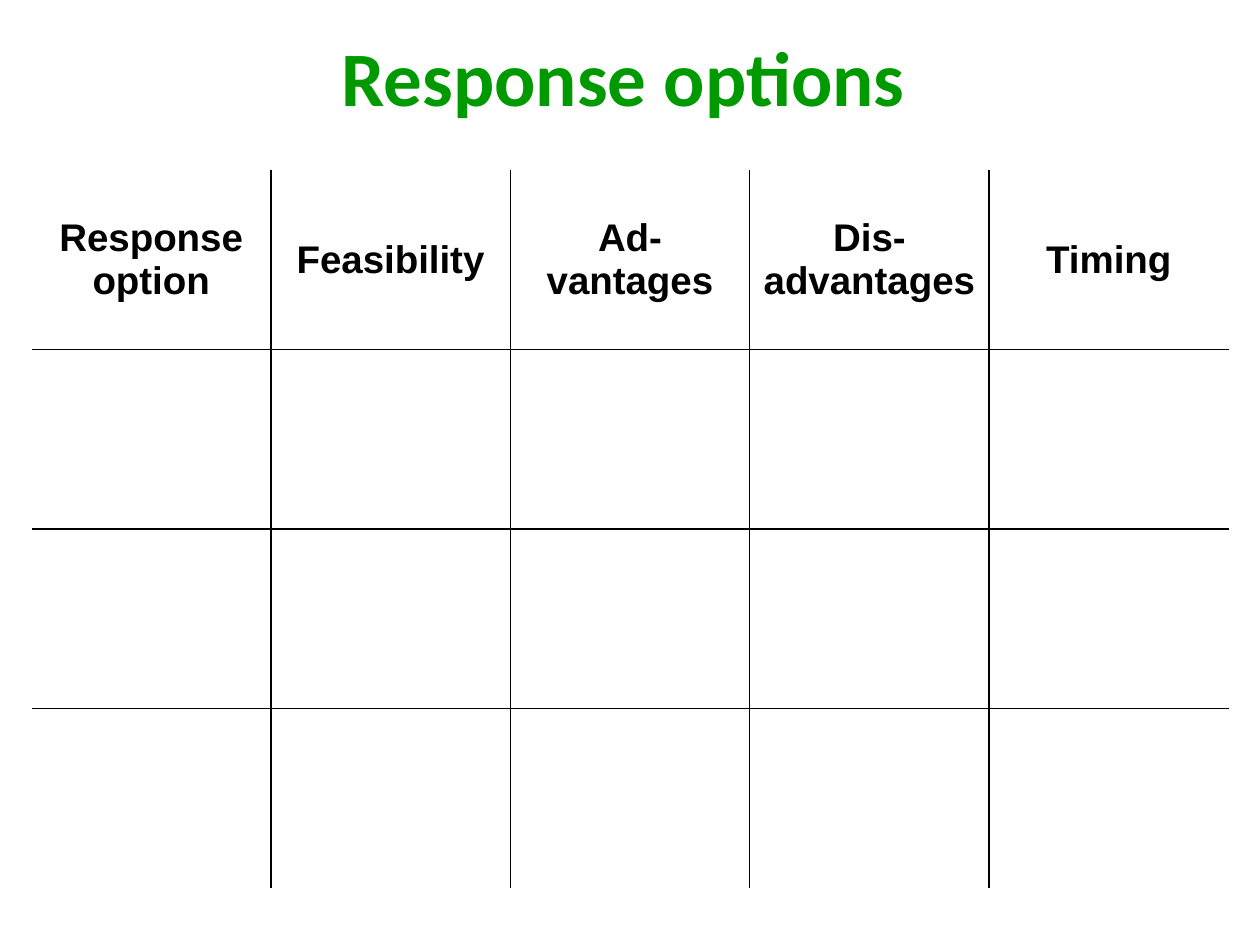
from dataclasses import dataclass

from lxml import etree
from pptx import Presentation
from pptx.dml.color import RGBColor
from pptx.enum.text import MSO_ANCHOR, PP_ALIGN
from pptx.oxml.ns import qn
from pptx.util import Inches, Pt

CENTER = PP_ALIGN.CENTER
MIDDLE = MSO_ANCHOR.MIDDLE
TITLE_ONLY = 5
HEADINGS = ["Response option", "Feasibility", "Ad-vantages", "Dis-advantages", "Timing"]
OPTION_ROWS = 3


@dataclass(frozen=True)
class Theme:
    """Colours, fonts and sizes of the slide."""
    title_color: str = "009900"
    ink: str = "000000"
    paper: str = "FFFFFF"
    title_font: str = "Calibri"
    body_font: str = "Arial"
    title_size: int = 44
    heading_size: int = 22
    rule_width: int = 1


class SlideBuilder:
    """Draws styled elements on one slide, placed in shares of its size."""

    def __init__(self, presentation, theme):
        self.theme = theme
        self.width = presentation.slide_width
        self.height = presentation.slide_height
        self.slide = presentation.slides.add_slide(presentation.slide_layouts[TITLE_ONLY])

    def area(self, left, top, width, height):
        """Turn shares of the slide into lengths."""
        return (int(left * self.width), int(top * self.height),
                int(width * self.width), int(height * self.height))

    def set_text(self, text_frame, text, font_name, size, color):
        """Set one bold, centred paragraph."""
        paragraph = text_frame.paragraphs[0]
        paragraph.text = text
        paragraph.alignment = CENTER
        font = paragraph.font
        font.name, font.size, font.bold = font_name, Pt(size), True
        font.color.rgb = RGBColor.from_string(color)

    def title(self, text, *shares):
        """Place and fill the title placeholder."""
        shape = self.slide.shapes.title
        shape.left, shape.top, shape.width, shape.height = self.area(*shares)
        shape.text_frame.vertical_anchor = MIDDLE
        self.set_text(shape.text_frame, text, self.theme.title_font,
                      self.theme.title_size, self.theme.title_color)

    def border(self, cell, side, visible):
        """Rule one side of a cell, or leave it open."""
        properties = cell._tc.get_or_add_tcPr()
        line = etree.SubElement(properties, qn(f"a:ln{side}"), w=str(Pt(self.theme.rule_width)))
        if visible:
            fill = etree.SubElement(line, qn("a:solidFill"))
            etree.SubElement(fill, qn("a:srgbClr"), val=self.theme.ink)
        else:
            etree.SubElement(line, qn("a:noFill"))

    def grid(self, headings, blank_rows, *shares):
        """Add an even table with inner rules only."""
        rows, columns = blank_rows + 1, len(headings)
        table = self.slide.shapes.add_table(rows, columns, *self.area(*shares)).table
        table.first_row = table.horz_banding = False
        for row in range(rows):
            for column in range(columns):
                cell = table.cell(row, column)
                inner = {"L": column > 0, "R": column < columns - 1,
                         "T": row > 0, "B": row < rows - 1}
                for side, visible in inner.items():
                    self.border(cell, side, visible)
                cell.fill.solid()
                cell.fill.fore_color.rgb = RGBColor.from_string(self.theme.paper)
        for column, heading in enumerate(headings):
            cell = table.cell(0, column)
            cell.vertical_anchor = MIDDLE
            self.set_text(cell.text_frame, heading, self.theme.body_font,
                          self.theme.heading_size, self.theme.ink)


def main():
    """Build and save the slide."""
    presentation = Presentation()
    presentation.slide_width, presentation.slide_height = Inches(10), Inches(7.5)
    builder = SlideBuilder(presentation, Theme())
    builder.title("Response options", 0.02, 0.03, 0.95, 0.1)
    builder.grid(HEADINGS, OPTION_ROWS, 0.025, 0.18, 0.95, 0.76)
    presentation.save("out.pptx")


if __name__ == "__main__":
    main()
